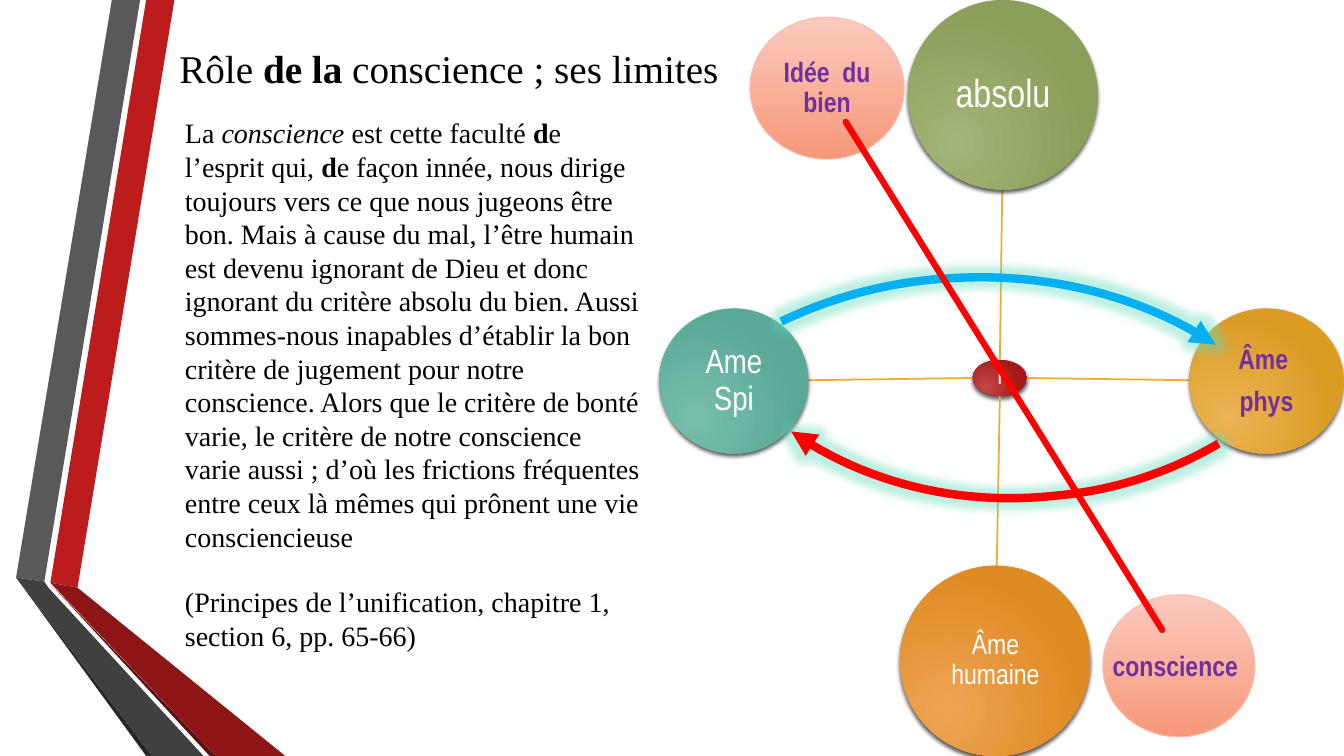
from dataclasses import dataclass
from pptx import Presentation
from pptx.dml.color import RGBColor
from pptx.enum.shapes import MSO_CONNECTOR, MSO_SHAPE
from pptx.enum.text import MSO_ANCHOR, PP_ALIGN
from pptx.oxml import parse_xml
from pptx.oxml.ns import nsdecls, qn
from pptx.util import Pt


@dataclass(frozen=True)
class Theme:
    serif: str = "Times New Roman"
    narrow: str = "Arial Narrow"
    hub_font: str = "Cabin"
    title: int = 28
    body: int = 20
    large: int = 28
    medium: int = 24
    label: int = 20
    hub_size: int = 15
    ink: str = "000000"
    white: str = "FFFFFF"
    purple: str = "7030A0"
    spoke: str = "EAAC35"
    blue: str = "00B0F0"
    red: str = "FF0000"
    pink_line: str = "FABDAE"
    glow: str = "5ED9BB"
    pink: tuple = ("FBCABE", "F79779")
    hub: tuple = ("C14747", "A71919")
    green: tuple = ("A3B577", "8B9E5A")
    gold: tuple = ("ECB354", "DB9C24")
    orange: tuple = ("EFA354", "DF8B23")
    teal: tuple = ("78BEAD", "58A996")


T = Theme()

RIBBONS = [
    ("BC1C1C", [(36, 416.2), (55.4, 419.8), (124.6, 0), (104.4, 0)]),
    ("595959", [(100.1, 0), (79.9, 0), (11.5, 412.6), (31.7, 415.4)]),
    ("262626", [(11.5, 412.6), (104.4, 540), (108.7, 540)]),
    ("5E0E0E", [(36, 416.9), (149.8, 540), (154.1, 540)]),
    ("8D1515", [(36, 416.2), (154.1, 540), (203.8, 540), (55.4, 419.8)]),
    ("404040", [(145.4, 540), (34.6, 419.8), (31.7, 415.4), (11.5, 412.6), (108.7, 540)]),
]

UPPER_ARC = [(558, 229.7), (595.4, 211.7), (637.2, 200.9), (679.7, 198.7),
             (748.8, 194.4), (816.5, 211.7), (868.3, 246.2)]
LOWER_ARC = [(870.5, 316.8), (835.2, 337.7), (794.9, 350.6), (752.4, 354.2),
             (684.7, 361.4), (617.8, 344.9), (565.2, 308.2)]

BODY = [
    ("La ", ""), ("conscience ", "i"), ("est cette faculté ", ""), ("d", "b"),
    ("e l’esprit qui, ", ""), ("d", "b"),
    ("e façon innée, nous dirige toujours vers ce que nous jugeons être bon. "
     "Mais à cause du mal, l’être humain est devenu ignorant de Dieu et donc "
     "ignorant du critère absolu du bien. Aussi sommes-nous inapables d’établir "
     "la bon critère de jugement pour notre conscience. Alors que le critère de "
     "bonté varie, le critère de notre conscience varie aussi ; d’où les frictions "
     "fréquentes entre ceux là mêmes qui prônent une vie consciencieuse", ""),
]
SOURCE = [("(Principes de l’unification, chapitre 1, section 6, pp. 65-66)", "")]


def rgb(color):
    return RGBColor.from_string(color)


def add_effect(s, xml):
    s.shadow.inherit = False
    s._element.spPr.find(qn("a:effectLst")).append(parse_xml(xml))


def style_font(p, name, size, color, bold=False):
    f = p.font
    f.name, f.size, f.bold = name, Pt(size), bold
    f.color.rgb = rgb(color)


def outline(shapes, points, close):
    pts = [(Pt(x), Pt(y)) for x, y in points]
    fb = shapes.build_freeform(*pts[0], scale=1.0)
    fb.add_line_segments(pts[1:], close=close)
    s = fb.convert_to_shape()
    s.shadow.inherit = False
    return s


def add_ribbon(shapes, color, points):
    s = outline(shapes, points, True)
    s.fill.solid()
    s.fill.fore_color.rgb = rgb(color)
    s.line.fill.background()


def bezier(a, b, c, d, t):
    u = 1 - t
    return tuple(u**3 * i + 3 * u * u * t * j + 3 * u * t * t * k + t**3 * m
                 for i, j, k, m in zip(a, b, c, d))


def add_arc_arrow(shapes, color, controls, steps=24):
    points = [controls[0]]
    for start in range(0, len(controls) - 1, 3):
        points += [bezier(*controls[start:start + 4], n / steps)
                   for n in range(1, steps + 1)]
    s = outline(shapes, points, False)
    s.fill.background()
    s.line.color.rgb = rgb(color)
    s.line.width = Pt(6)
    ln = s.line._get_or_add_ln()
    ln.append(parse_xml(f'<a:round {nsdecls("a")}/>'))
    ln.append(parse_xml(f'<a:tailEnd {nsdecls("a")} type="triangle"/>'))
    add_effect(s, f'<a:glow {nsdecls("a")} rad="{Pt(11)}"><a:srgbClr val="{T.glow}">'
                  '<a:alpha val="40000"/></a:srgbClr></a:glow>')


def add_line(shapes, start, end, color, width):
    s = shapes.add_connector(MSO_CONNECTOR.STRAIGHT, *map(Pt, start + end))
    s.line.color.rgb = rgb(color)
    s.line.width = Pt(width)
    s._element.spPr.append(parse_xml(f'<a:effectLst {nsdecls("a")}/>'))
    return s


def add_circle(shapes, box, colors, lines=(), font=T.narrow, size=T.label,
               color=T.white, bold=False):
    s = shapes.add_shape(MSO_SHAPE.OVAL, *map(Pt, box))
    s.shadow.inherit = False
    s.fill.gradient()
    s.fill.gradient_angle = 270
    for stop, tint in zip(s.fill.gradient_stops, colors):
        stop.color.rgb = rgb(tint)
    s.line.fill.background()
    tf = s.text_frame
    tf.word_wrap = True
    tf.vertical_anchor = MSO_ANCHOR.MIDDLE
    tf.margin_left = tf.margin_right = tf.margin_top = tf.margin_bottom = Pt(1)
    for n, text in enumerate(lines):
        p = tf.add_paragraph() if n else tf.paragraphs[0]
        p.text = text
        p.alignment = PP_ALIGN.CENTER
        p.line_spacing = 0.9
        p.space_after = Pt(0.42 * size)
        style_font(p, font, size, color, bold)
    return s


def add_ball(shapes, box, colors, lines, **style):
    s = add_circle(shapes, box, colors, lines, **style)
    grad = s._element.spPr.find(qn("a:gradFill"))
    grad.replace(grad.find(qn("a:lin")), parse_xml(
        f'<a:path {nsdecls("a")} path="circle">'
        '<a:fillToRect l="50000" t="100000" r="100000" b="50000"/></a:path>'))
    add_effect(s, f'<a:outerShdw {nsdecls("a")} blurRad="{Pt(3)}" dist="{Pt(2)}" '
                  'dir="5400000" rotWithShape="0"><a:srgbClr val="000000">'
                  '<a:alpha val="64000"/></a:srgbClr></a:outerShdw>')


def add_pink(shapes, box, lines=()):
    s = add_circle(shapes, box, T.pink, lines, color=T.purple, bold=True)
    s.line.color.rgb = rgb(T.pink_line)
    s.line.width = Pt(0.75)


def add_text(shapes, box, paragraphs, font, size, color=T.ink, bold=False,
             wrap=True, before=0):
    tf = shapes.add_textbox(*map(Pt, box)).text_frame
    tf.word_wrap = wrap
    for n, runs in enumerate(paragraphs):
        p = tf.add_paragraph() if n else tf.paragraphs[0]
        p.space_before = Pt(before if n or len(paragraphs) == 1 else 0)
        style_font(p, font, size, color, bold)
        for text, marks in runs:
            r = p.add_run()
            r.text = text
            if "b" in marks:
                r.font.bold = True
            if "i" in marks:
                r.font.italic = True


def main():
    prs = Presentation()
    prs.slide_width, prs.slide_height = Pt(960), Pt(540)
    shapes = prs.slides.add_slide(prs.slide_layouts[6]).shapes

    for color, points in RIBBONS:
        add_ribbon(shapes, color, points)

    title = [("Rôle ", ""), ("de la ", "b"), ("conscience ; ses limites", "")]
    add_text(shapes, (121, 28, 424, 34.5), [title], T.serif, T.title, before=2)

    add_ball(shapes, (694.8, 257, 38.9, 25.9), T.hub, ["i"],
             font=T.hub_font, size=T.hub_size)
    for start, end in [((714.2, 257), (715.9, 135.4)), ((733.7, 270), (849.6, 271.6)),
                       ((714.2, 282.9), (712, 403.9)), ((694.8, 270), (577.5, 271.6))]:
        add_line(shapes, start, end, T.spoke, 1.25)
    add_ball(shapes, (648.7, 0, 135.4, 135.4), T.green, ["absolu"], size=T.large)
    add_ball(shapes, (849.6, 220.3, 110.2, 103.7), T.gold, ["Âme ", "phys"],
             color=T.purple, bold=True)
    add_ball(shapes, (643, 403.9, 136.1, 136.1), T.orange, ["Âme humaine"])
    add_ball(shapes, (470.9, 220.3, 106.6, 103.7), T.teal, ["Ame Spi"], size=T.medium)

    add_arc_arrow(shapes, T.blue, UPPER_ARC)
    add_arc_arrow(shapes, T.red, LOWER_ARC)

    add_text(shapes, (125, 79.2, 342, 371), [BODY, SOURCE], T.serif, T.body, before=23)

    add_pink(shapes, (787.7, 424.8, 108.7, 101.5))
    add_pink(shapes, (535.7, 12.2, 110.2, 101.5), ["Idée  du bien"])
    diagonal = add_line(shapes, (604.1, 87.1), (830.2, 450), T.red, 4.5)
    diagonal.line._get_or_add_ln().set("cap", "rnd")
    add_text(shapes, (787.7, 459.4, 104.4, 31.5), [[("conscience", "")]],
             T.narrow, T.label, T.purple, True, wrap=False)

    prs.save("out.pptx")


if __name__ == "__main__":
    main()
